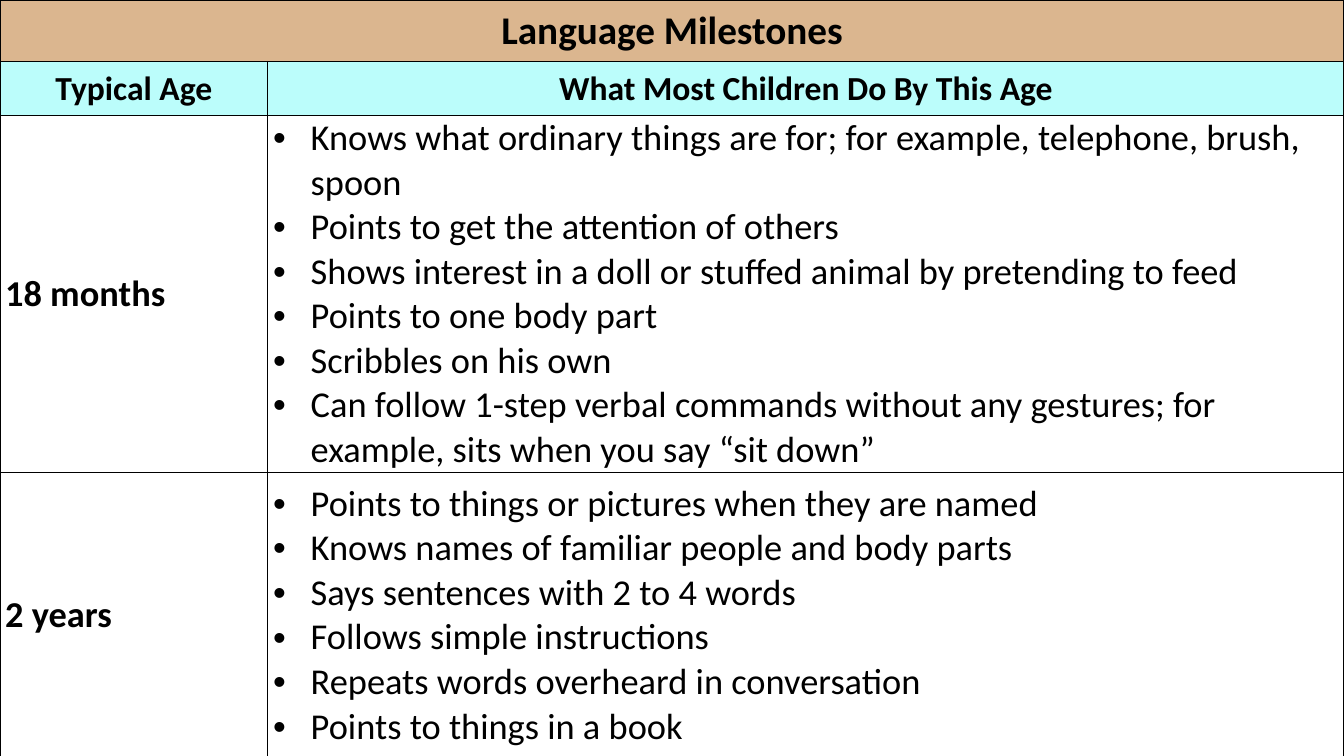
"""Build a slide with a table of language milestones by age."""
from lxml import etree
from pptx import Presentation
from pptx import util as u
from pptx.dml.color import RGBColor
from pptx.enum import text
from pptx.oxml import ns

BLACK = RGBColor(0x00, 0x00, 0x00)
TAN = RGBColor(0xDB, 0xB6, 0x8F)
AQUA = RGBColor(0xBB, 0xFD, 0xFB)

WIDTH, HEIGHT = u.Cm(33.87), u.Cm(19.05)
COLUMN_WIDTHS = [6.75, 27.12]
ROW_HEIGHTS = [1.55, 1.37, 8.94, 7.21]

MILESTONES = {
    "18 months": [
        "Knows what ordinary things are for; for example, telephone, brush, spoon",
        "Points to get the attention of others",
        "Shows interest in a doll or stuffed animal by pretending to feed",
        "Points to one body part",
        "Scribbles on his own",
        "Can follow 1-step verbal commands without any gestures; "
        "for example, sits when you say “sit down”",
    ],
    "2 years": [
        "Points to things or pictures when they are named",
        "Knows names of familiar people and body parts",
        "Says sentences with 2 to 4 words",
        "Follows simple instructions",
        "Repeats words overheard in conversation",
        "Points to things in a book",
    ],
}


class MilestoneSlide:
    font = "Calibri"
    indent = u.Cm(0.95)
    inset = u.Cm(0.13)

    def __init__(self, deck):
        self.slide = deck.slides.add_slide(deck.slide_layouts[6])

    def table(self, widths, heights):
        frame = self.slide.shapes.add_table(
            len(heights), len(widths), 0, 0, WIDTH, HEIGHT)
        table = frame.table
        table.first_row = table.horz_banding = False
        for column, width in zip(table.columns, widths):
            column.width = u.Cm(width)
        for row, height in zip(table.rows, heights):
            row.height = u.Cm(height)
        for cell in table.iter_cells():
            self.borders(cell)
            cell.fill.background()
        return table

    def borders(self, cell):
        properties = cell._tc.get_or_add_tcPr()
        for side in ("a:lnL", "a:lnR", "a:lnT", "a:lnB"):
            line = etree.SubElement(properties, ns.qn(side), w=str(u.Pt(1)))
            fill = etree.SubElement(line, ns.qn("a:solidFill"))
            etree.SubElement(fill, ns.qn("a:srgbClr"), val=str(BLACK))

    def fill_text(self, cell, lines, size, bold=True):
        cell.vertical_anchor = text.MSO_ANCHOR.MIDDLE
        cell.margin_left = cell.margin_right = self.inset
        cell.margin_top = cell.margin_bottom = 0
        cell.text = "\n".join(lines)
        for paragraph in cell.text_frame.paragraphs:
            paragraph.font.name = self.font
            paragraph.font.size = u.Pt(size)
            paragraph.font.bold = bold
            paragraph.font.color.rgb = BLACK

    def label(self, cell, words, size):
        self.fill_text(cell, [words], size)
        cell.text_frame.paragraphs[0].space_after = u.Pt(10)

    def heading(self, cell, words, size, color):
        self.label(cell, words, size)
        cell.text_frame.paragraphs[0].alignment = text.PP_ALIGN.CENTER
        cell.fill.solid()
        cell.fill.fore_color.rgb = color

    def bullets(self, cell, items, size):
        self.fill_text(cell, items, size, bold=False)
        for paragraph in cell.text_frame.paragraphs:
            properties = paragraph._p.get_or_add_pPr()
            properties.set("marL", str(self.indent))
            properties.set("indent", str(-self.indent))
            bullet_font = etree.Element(ns.qn("a:buFont"), typeface="Arial")
            bullet = etree.Element(ns.qn("a:buChar"), char="•")
            properties.insert(0, bullet_font)
            properties.insert(1, bullet)


def main():
    deck = Presentation()
    deck.slide_width, deck.slide_height = WIDTH, HEIGHT
    page = MilestoneSlide(deck)
    table = page.table(COLUMN_WIDTHS, ROW_HEIGHTS)

    table.cell(0, 0).merge(table.cell(0, 1))
    page.heading(table.cell(0, 0), "Language Milestones", 28, TAN)
    page.heading(table.cell(1, 0), "Typical Age", 24, AQUA)
    page.heading(table.cell(1, 1), "What Most Children Do By This Age", 24, AQUA)
    for row, (age, skills) in enumerate(MILESTONES.items(), start=2):
        page.label(table.cell(row, 0), age, 26)
        page.bullets(table.cell(row, 1), skills, 26)

    deck.save("out.pptx")


if __name__ == "__main__":
    main()
